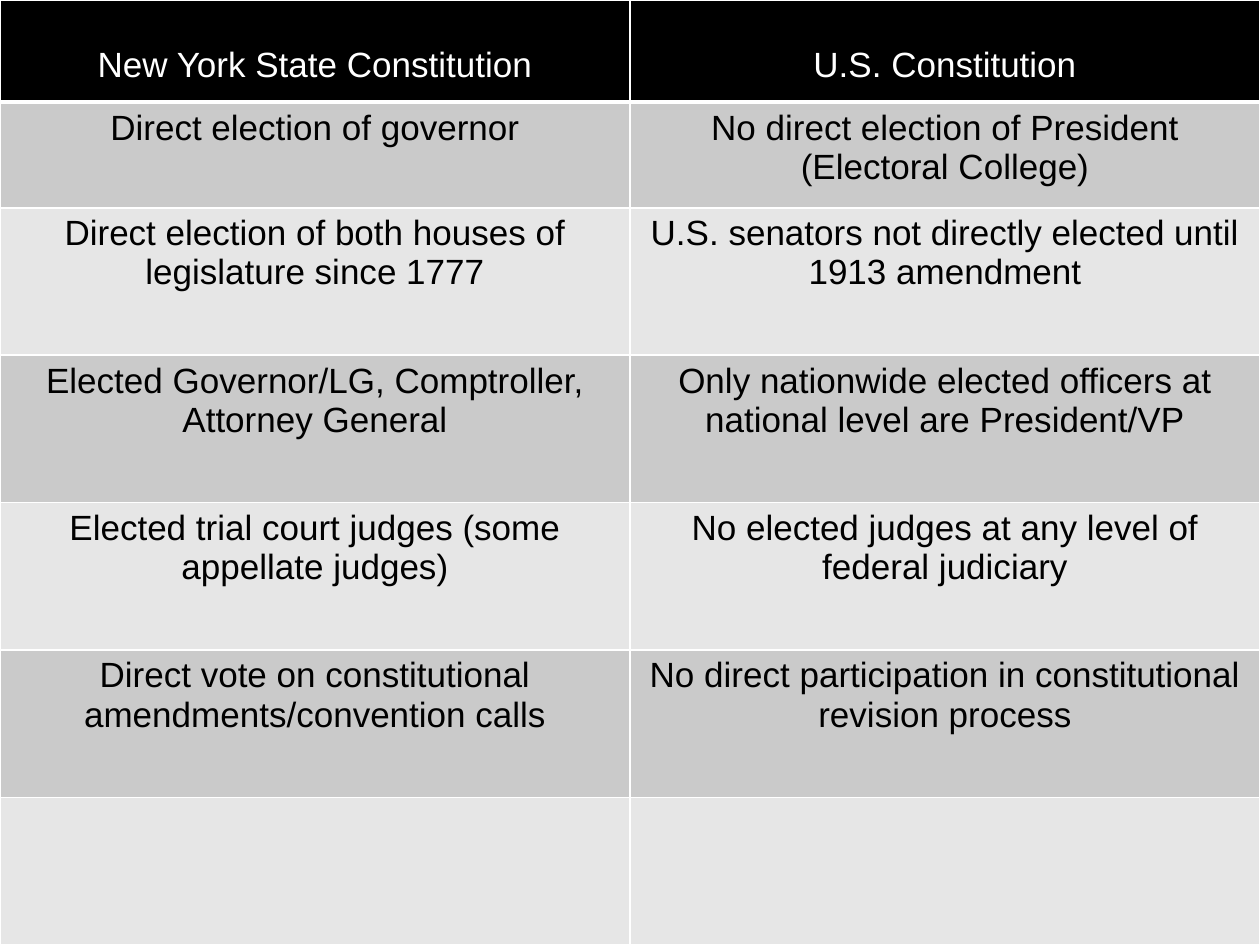
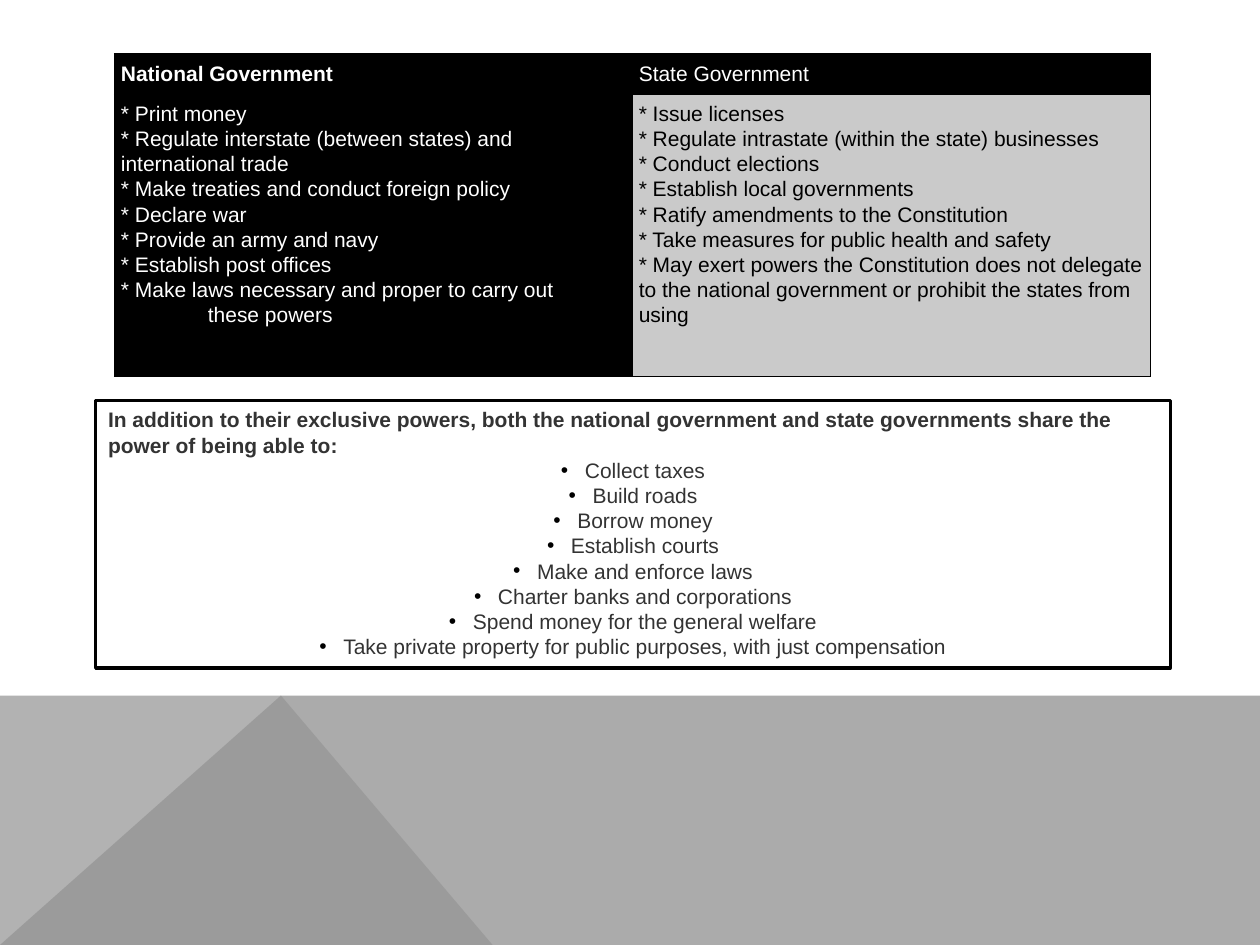
from dataclasses import dataclass

from lxml.etree import SubElement
from pptx import Presentation
from pptx.dml.color import RGBColor
from pptx.enum.shapes import MSO_SHAPE
from pptx.enum.text import MSO_ANCHOR, PP_ALIGN
from pptx.oxml import parse_xml
from pptx.oxml.ns import nsdecls, qn
from pptx.util import Emu, Pt

PX = 9144  # EMU in one px, 100 px to the inch
SLIDE_WIDTH, SLIDE_HEIGHT = 1000, 750

BLACK = RGBColor(0x00, 0x00, 0x00)
WHITE = RGBColor(0xFF, 0xFF, 0xFF)
INK = RGBColor(0x33, 0x33, 0x33)
DARK_BAND = RGBColor(0xCA, 0xCA, 0xCA)
LIGHT_BAND = RGBColor(0xE6, 0xE6, 0xE6)
WEDGE_GREY = RGBColor(0xB2, 0xB2, 0xB2)
HILL_GREY = RGBColor(0x96, 0x96, 0x96)

FONT = "Arial"
POWERS_SPACING = 1.07
BULLET_INDENT = 19


@dataclass(frozen=True)
class Wedge:
    points: tuple[tuple[int, int], ...]
    color: RGBColor
    opacity: int = 100


@dataclass(frozen=True)
class TextStyle:
    size: int
    color: RGBColor
    bold: bool = False
    align: PP_ALIGN = PP_ALIGN.LEFT
    spacing: float = 1.0


@dataclass(frozen=True)
class CellLook:
    style: TextStyle
    fill: RGBColor
    margin_x: int
    margin_top: int = 5


@dataclass(frozen=True)
class Borders:
    color: RGBColor
    width: float = 1
    header_rule: float = 1


WEDGES = (
    Wedge(((0, 750), (0, 552), (223, 552), (391, 750)), WEDGE_GREY),
    Wedge(((0, 750), (223, 552), (1000, 552), (1000, 750)), HILL_GREY, 80),
)

CONSTITUTIONS = (
    ("New York State Constitution", "U.S. Constitution"),
    ("Direct election of governor",
     "No direct election of President\n(Electoral College)"),
    ("Direct election of both houses of legislature since 1777",
     "U.S. senators not directly elected until 1913 amendment"),
    ("Elected Governor/LG, Comptroller, Attorney General",
     "Only nationwide elected officers at national level are President/VP"),
    ("Elected trial court judges (some appellate judges)",
     "No elected judges at any level of federal judiciary"),
    ("Direct vote on constitutional amendments/convention calls",
     "No direct participation in constitutional revision process"),
    ("", ""),
)

NATIONAL_POWERS = """* Print money
* Regulate interstate (between states) and
international trade
* Make treaties and conduct foreign policy
* Declare war
* Provide an army and navy
* Establish post offices
* Make laws necessary and proper to carry out
these powers"""

STATE_POWERS = """* Issue licenses
* Regulate intrastate (within the state) businesses
* Conduct elections
* Establish local governments
* Ratify amendments to the Constitution
* Take measures for public health and safety
* May exert powers the Constitution does not delegate to the national government or prohibit the states from using"""

POWERS = (
    ("National Government", "State Government"),
    (NATIONAL_POWERS, STATE_POWERS),
)

SHARED_INTRO = ("In addition to their exclusive powers, both the national government "
                "and state governments share the power of being able to:")
SHARED_POWERS = (
    "Collect taxes",
    "Build roads",
    "Borrow money",
    "Establish courts",
    "Make and enforce laws",
    "Charter banks and corporations",
    "Spend money for the general welfare",
    "Take private property for public purposes, with just compensation",
)


def px(length: float) -> Emu:
    return Emu(round(length * PX))


def style_paragraph(para, style: TextStyle) -> None:
    para.alignment = style.align
    para.line_spacing = style.spacing
    for font in (para.font, *(span.font for span in para.runs)):
        font.name = FONT
        font.size = Pt(style.size)
        font.bold = style.bold
        font.color.rgb = style.color


def indent(para, left: int, first: int = 0) -> None:
    properties = para._p.get_or_add_pPr()
    properties.set("marL", str(px(left)))
    properties.set("indent", str(px(first)))


def add_bullet(para) -> None:
    indent(para, BULLET_INDENT, -BULLET_INDENT)
    bullet_parts = (
        f'<a:buClr {nsdecls("a")}><a:srgbClr val="{BLACK}"/></a:buClr>',
        f'<a:buFont {nsdecls("a")} typeface="{FONT}"/>',
        f'<a:buChar {nsdecls("a")} char="•"/>',
    )
    defaults = para._p.pPr.find(qn("a:defRPr"))
    for part in bullet_parts:
        defaults.addprevious(parse_xml(part))


def add_wedges(deck, page) -> None:
    """Draw the wedges and move them to the master, which all slides share."""
    master_tree = deck.slide_master.element.cSld.spTree
    for wedge in WEDGES:
        start, *rest = wedge.points
        builder = page.shapes.build_freeform(*start, scale=PX)
        builder.add_line_segments(rest, close=True)
        shape = builder.convert_to_shape()
        shape.shadow.inherit = False
        shape.fill.solid()
        shape.fill.fore_color.rgb = wedge.color
        shape.line.fill.background()
        if wedge.opacity < 100:
            color = shape.element.spPr.find(qn("a:solidFill"))[0]
            SubElement(color, qn("a:alpha"), val=str(wedge.opacity * 1000))
        master_tree.append(shape.element)


def set_borders(cell, borders: Borders, row: int) -> None:
    widths = {"L": borders.width, "R": borders.width,
              "T": borders.header_rule if row == 1 else borders.width,
              "B": borders.header_rule if row == 0 else borders.width}
    properties = cell._tc.get_or_add_tcPr()
    for position, (side, width) in enumerate(widths.items()):
        properties.insert(position, parse_xml(
            f'<a:ln{side} {nsdecls("a")} w="{Pt(width)}"><a:solidFill>'
            f'<a:srgbClr val="{borders.color}"/></a:solidFill></a:ln{side}>'))


def fill_cell(cell, text: str, look: CellLook) -> None:
    cell.text = text
    cell.margin_left = cell.margin_right = px(look.margin_x)
    cell.margin_top, cell.margin_bottom = px(look.margin_top), px(5)
    cell.vertical_anchor = MSO_ANCHOR.TOP
    cell.fill.solid()
    cell.fill.fore_color.rgb = look.fill
    for para in cell.text_frame.paragraphs:
        style_paragraph(para, look.style)


def add_grid(page, left: int, top: int, column_width: int, heights: list[int],
             texts, looks, borders: Borders):
    """Add a table whose looks(row, column) gives the look of each cell."""
    columns = len(texts[0])
    table = page.shapes.add_table(len(texts), columns, px(left), px(top),
                                  px(column_width * columns), px(sum(heights))).table
    table.first_row = table.horz_banding = False
    for column in table.columns:
        column.width = px(column_width)
    for row, (height, row_texts) in enumerate(zip(heights, texts)):
        table.rows[row].height = px(height)
        for column, text in enumerate(row_texts):
            cell = table.cell(row, column)
            fill_cell(cell, text, looks(row, column))
            set_borders(cell, borders, row)
    return table


def constitution_look(row: int, column: int) -> CellLook:
    if row == 0:
        return CellLook(TextStyle(20, WHITE, align=PP_ALIGN.CENTER), BLACK, 10, 36)
    band = DARK_BAND if row % 2 else LIGHT_BAND
    return CellLook(TextStyle(20, BLACK, align=PP_ALIGN.CENTER), band, 10)


def powers_look(row: int, column: int) -> CellLook:
    on_grey = (row, column) == (1, 1)
    style = TextStyle(12, BLACK if on_grey else WHITE,
                      bold=(row, column) == (0, 0), spacing=POWERS_SPACING)
    return CellLook(style, DARK_BAND if on_grey else BLACK, 5)


def add_shared_powers(page) -> None:
    box = page.shapes.add_shape(MSO_SHAPE.RECTANGLE, px(76), px(318), px(853), px(212))
    box.shadow.inherit = False
    box.fill.solid()
    box.fill.fore_color.rgb = WHITE
    box.line.color.rgb = BLACK
    box.line.width = Pt(2)
    frame = box.text_frame
    frame.word_wrap = True
    frame.vertical_anchor = MSO_ANCHOR.TOP
    frame.text = "\n".join((SHARED_INTRO, *SHARED_POWERS))
    intro, *powers = frame.paragraphs
    style_paragraph(intro, TextStyle(12, INK, bold=True))
    for para in powers:
        style_paragraph(para, TextStyle(12, INK, align=PP_ALIGN.CENTER))
        add_bullet(para)


def main() -> None:
    deck = Presentation()
    deck.slide_width, deck.slide_height = px(SLIDE_WIDTH), px(SLIDE_HEIGHT)
    blank = deck.slide_layouts[6]

    constitutions_page = deck.slides.add_slide(blank)
    add_wedges(deck, constitutions_page)
    add_grid(constitutions_page, 0, 0, SLIDE_WIDTH // 2, [81, 84] + [117] * 5,
             CONSTITUTIONS, constitution_look, Borders(WHITE, header_rule=3))

    powers_page = deck.slides.add_slide(blank)
    powers_table = add_grid(powers_page, 91, 43, 411, [32, 224],
                            POWERS, powers_look, Borders(BLACK))
    indent(powers_table.cell(1, 0).text_frame.paragraphs[-1], 69)
    add_shared_powers(powers_page)

    deck.save("out.pptx")


if __name__ == "__main__":
    main()
